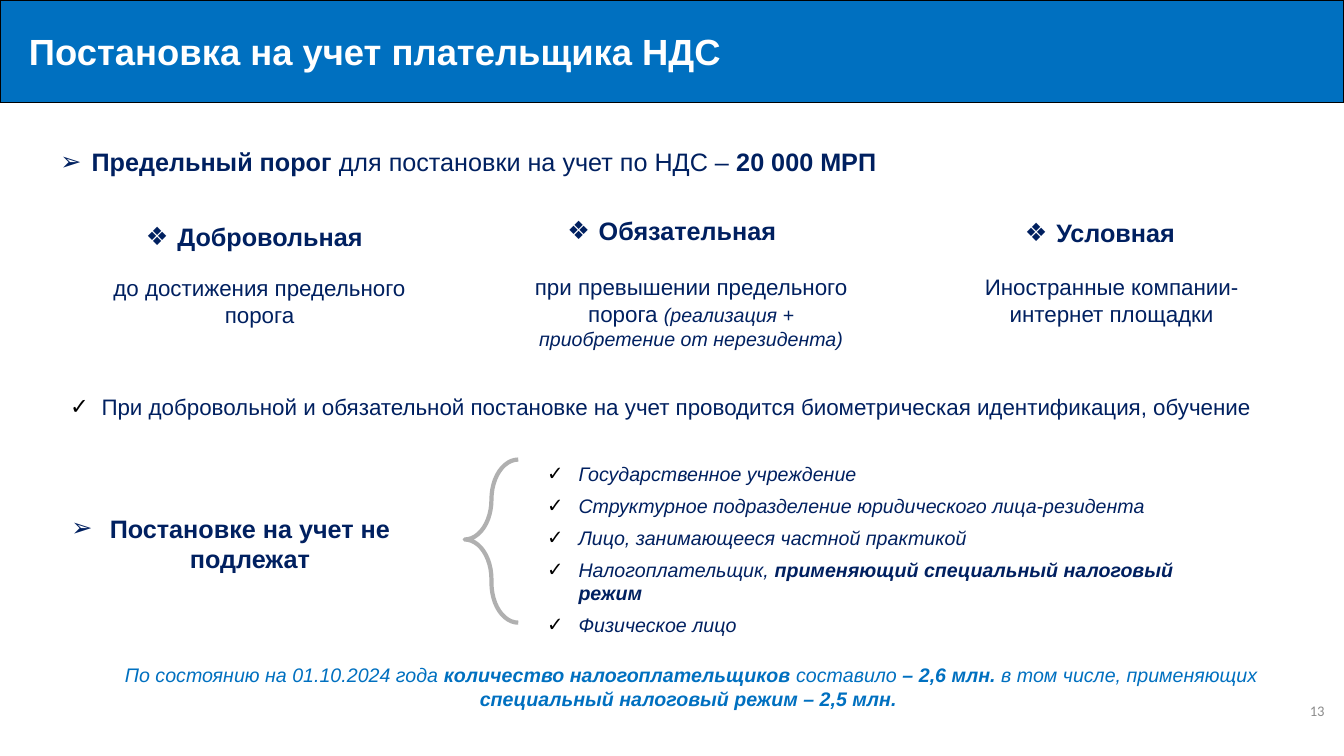
from lxml.etree import SubElement
from pptx import Presentation
from pptx.dml.color import RGBColor
from pptx.enum.shapes import MSO_SHAPE
from pptx.enum.text import MSO_ANCHOR, MSO_AUTO_SIZE, PP_ALIGN
from pptx.oxml.ns import qn
from pptx.util import Cm, Pt

NAVY, BLUE, WHITE, BLACK = "002060", "0070C0", "FFFFFF", "000000"
CENTER = PP_ALIGN.CENTER


def paint(color, code):
    color.rgb = RGBColor.from_string(code)


def add_mark(para, mark, indent, color=None):
    """Give a paragraph a hanging bullet."""
    props = para._p.get_or_add_pPr()
    props.set("marL", str(Cm(indent)))
    props.set("indent", str(-Cm(indent)))
    if color:
        shade = SubElement(props, qn("a:buClr"))
        SubElement(shade, qn("a:srgbClr")).set("val", color)
    SubElement(props, qn("a:buFont")).set("typeface", "Arial")
    SubElement(props, qn("a:buChar")).set("char", mark)


def add_runs(para, runs, size, code, face="Arial"):
    """Write runs of (text, style letters b and i, optional own size)."""
    for text, style, *own in runs:
        run = para.add_run()
        run.text = text
        look = {"name": face, "size": Pt(own[0] if own else size),
                "bold": "b" in style, "italic": "i" in style}
        for key, value in look.items():
            setattr(run.font, key, value)
        paint(run.font.color, code)


def add_text(slide, box, paras, size, code=NAVY, align=PP_ALIGN.LEFT, wrap=True,
             mark=None, indent=0.79, tint=None, gap=0):
    frame = slide.shapes.add_textbox(*map(Cm, box)).text_frame
    frame.word_wrap = wrap
    frame.auto_size = MSO_AUTO_SIZE.SHAPE_TO_FIT_TEXT
    for pos, runs in enumerate(paras):
        para = frame.add_paragraph() if pos else frame.paragraphs[0]
        if mark:
            add_mark(para, mark, indent, tint)
        para.alignment = align
        if pos:
            para.space_before = Pt(gap)
        add_runs(para, runs, size, code)


def add_title(slide, text):
    bar = slide.shapes.add_shape(MSO_SHAPE.RECTANGLE, 0, 0, Cm(33.87), Cm(2.59))
    bar.shadow.inherit = False
    bar.fill.solid()
    paint(bar.fill.fore_color, BLUE)
    paint(bar.line.color, BLACK)
    bar.line.width = Pt(1)
    frame = bar.text_frame
    frame.margin_left = Cm(0.73)
    frame.vertical_anchor = MSO_ANCHOR.MIDDLE
    para = frame.paragraphs[0]
    para.alignment = PP_ALIGN.LEFT
    add_runs(para, [(text, "b")], 26, WHITE)


def add_number(slide, text):
    frame = slide.shapes.add_textbox(Cm(30.45), Cm(16.99), Cm(3.18), Cm(1.85)).text_frame
    frame.word_wrap = True
    frame.vertical_anchor = MSO_ANCHOR.MIDDLE
    para = frame.paragraphs[0]
    para.alignment = PP_ALIGN.RIGHT
    add_runs(para, [(text, "")], 10.5, "8C8C8C", "Calibri")


def add_brace(slide):
    brace = slide.shapes.add_shape(MSO_SHAPE.RIGHT_BRACE, Cm(11.71), Cm(11.58), Cm(1.35), Cm(4.11))
    brace.rotation = 180
    brace.adjustments[0], brace.adjustments[1] = 1.14, 0.51
    brace.shadow.inherit = False
    brace.fill.background()
    paint(brace.line.color, "7C7C7C")
    brace.line.width = Pt(3)
    shade = brace.line._ln.find(".//" + qn("a:srgbClr"))
    SubElement(shade, qn("a:alpha")).set("val", "60000")


def main():
    deck = Presentation()
    deck.slide_width, deck.slide_height = Cm(33.87), Cm(19.05)
    slide = deck.slides.add_slide(deck.slide_layouts[6])

    add_title(slide, "Постановка на учет плательщика НДС")
    add_number(slide, "13")

    limit = [("Предельный порог ", "b"), ("для постановки на учет по НДС – ", ""),
             ("20 000 МРП", "b")]
    add_text(slide, (1.27, 3.56, 21.29, 1.02), [limit], 18, wrap=False, mark="➢")

    kinds = [
        ("Добровольная", (3.43, 5.46, 6.17, 1.02), (2.41, 6.78, 8.26, 1.63),
         [("до достижения предельного порога", "")]),
        ("Обязательная", (14.05, 5.31, 6.2, 1.02), (12.9, 6.76, 9.04, 2.24),
         [("при превышении предельного порога ", ""),
          ("(реализация + приобретение от нерезидента)", "i", 14)]),
        ("Условная", (25.58, 5.36, 4.85, 1.02), (23.47, 6.76, 9.09, 1.63),
         [("Иностранные компании- интернет площадки", "")]),
    ]
    for name, head, body, note in kinds:
        add_text(slide, head, [[(name, "b")]], 18, wrap=False, mark="❖")
        add_text(slide, body, [note], 16, align=CENTER)

    check = [("При добровольной и обязательной постановке на учет проводится "
              "биометрическая идентификация, обучение", "")]
    add_text(slide, (1.52, 9.78, 30.51, 0.94), [check], 16,
             align=PP_ALIGN.JUSTIFY, mark="✓", tint=BLACK)

    add_text(slide, (0.38, 12.8, 10.87, 1.8), [[("Постановке на учет не подлежат", "b")]],
             18, align=CENTER, mark="➢", indent=0.97)
    add_brace(slide)
    exempt = [
        [("Государственное учреждение", "i")],
        [("Структурное подразделение юридического лица-резидента", "i")],
        [("Лицо, занимающееся частной практикой", "i")],
        [("Налогоплательщик, ", "i"), ("применяющий специальный налоговый режим", "bi")],
        [("Физическое лицо", "i")],
    ]
    add_text(slide, (13.54, 11.51, 17.98, 4.11), exempt, 14, mark="✓", tint=BLACK, gap=6)

    total = [("По состоянию на 01.10.2024 года ", "i"), ("количество налогоплательщиков ", "bi"),
             ("составило", "i"), (" – 2,6 млн. ", "bi"), ("в том числе, применяющих ", "i"),
             ("специальный налоговый режим – 2,5 млн. ", "bi")]
    add_text(slide, (2.08, 16.59, 30.68, 1.45), [total], 14, BLUE, CENTER)

    deck.save("out.pptx")


if __name__ == "__main__":
    main()
